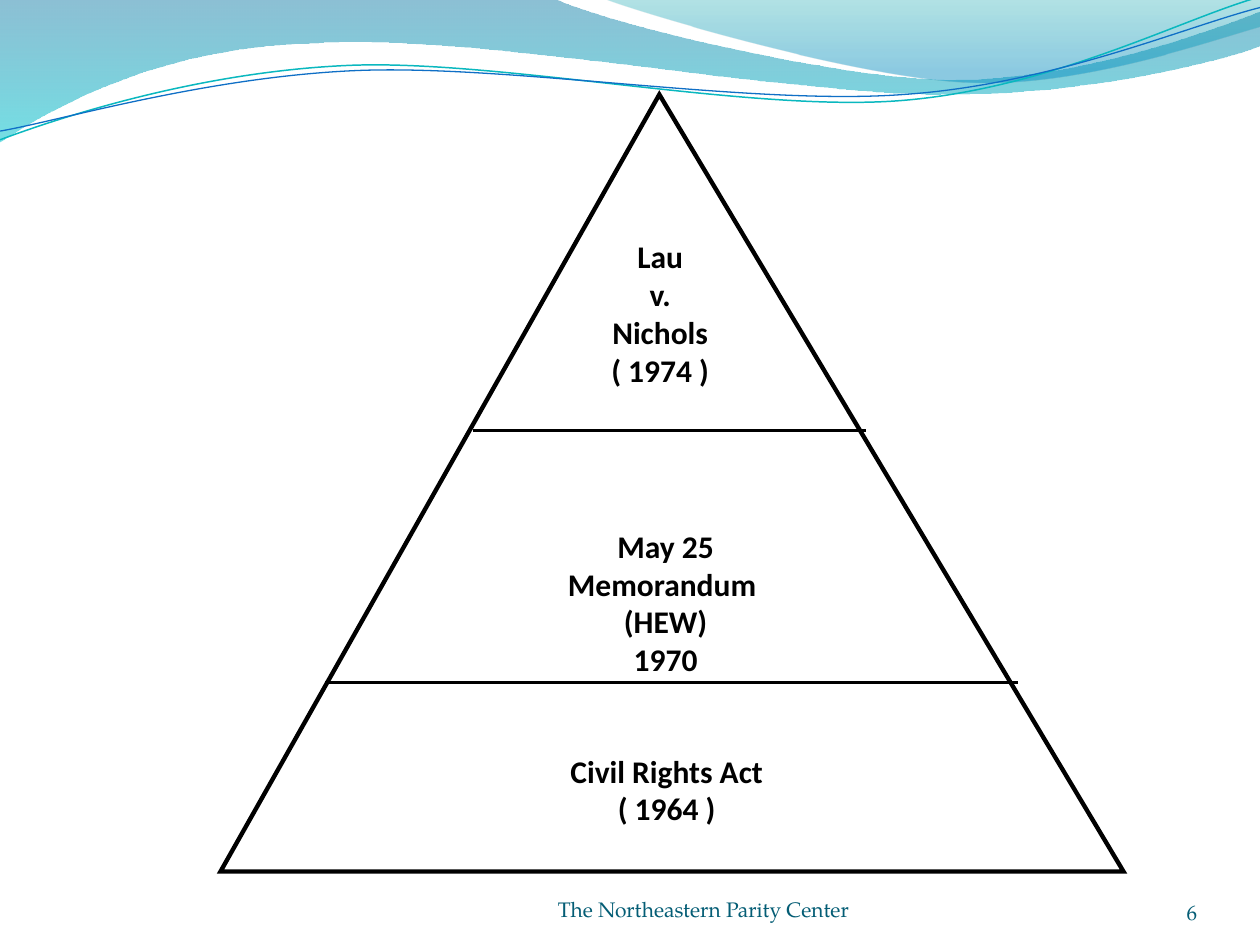
from lxml import etree
from pptx import Presentation
from pptx import util as u
from pptx.dml import color
from pptx.enum import shapes, text
from pptx.oxml import ns

Pt = u.Pt


def tint(fmt, code):
    fmt.rgb = color.RGBColor.from_string(code)


def write(frame, lines, frame_fmt, font_fmt, code, align):
    for key, val in frame_fmt.items():
        setattr(frame, key, val)
    for i, line in enumerate(lines):
        para = frame.paragraphs[0] if i == 0 else frame.add_paragraph()
        para.alignment = align
        run = para.add_run()
        run.text = line
        for key, val in font_fmt.items():
            setattr(run.font, key, val)
        tint(run.font.color, code)


prs = Presentation()
prs.slide_width, prs.slide_height = Pt(720), Pt(540)
slide = prs.slides.add_slide(prs.slide_layouts[6])
items = slide.shapes

waves = [
    {"start": (0, 0), "parts": [
        (316.8, -0.7),
        (342.7, 12.2, 478.1, 45.4, 545.8, 45.4),
        (614.2, 45.4, 689.8, 18.7, 720, 6.5),
        (720.7, 25.9),
        (707.8, 31.7, 626.4, 54.7, 537.1, 54),
        (447.8, 54, 275, 20.2, 185, 24.5),
        (92.9, 25.9, 33.1, 59.8, -0.7, 81.4),
        (0, 0)],
     "stops": [(0, "0074A1", 45), (1, "00C6CF", 55)]},
    {"start": (344.9, -0.7), "parts": [
        (366.5, 7.9, 491, 44.6, 553.7, 46.8),
        (616.3, 49.7, 691.9, 23, 720, 15.1),
        (720, 0),
        (344.9, -0.7)],
     "stops": [(0, "00A1A9", 30), (0.8, "008BBF", 45)]},
    {"start": (0, 79.9), "parts": [
        (34.6, 67, 113.8, 41, 199.4, 37.4),
        (284.4, 33.8, 427, 64.1, 513.4, 57.6),
        (599.8, 51.1, 675.4, 10.8, 718.6, -1.4)],
     "line": ("0AB8BF", 0.85)},
    {"start": (0, 74.9), "parts": [
        (33.8, 69.1, 118.1, 43.9, 203.8, 40.3),
        (290.2, 36.7, 429.8, 60.5, 516.2, 54),
        (601.9, 48.2, 677.5, 15.1, 720, 4.3)],
     "line": ("0F6FC6", 0.75)},
]
for wave in waves:
    pen = items.build_freeform(*map(Pt, wave["start"]))
    dots = [(Pt(part[i]), Pt(part[i + 1]))
            for part in wave["parts"] for i in range(0, len(part), 2)]
    pen.add_line_segments(dots, close="stops" in wave)
    curve = pen.convert_to_shape()
    curve.shadow.inherit = False
    legs = iter(list(curve.element.iter(ns.qn("a:lnTo"))))
    for part in wave["parts"]:
        leg = next(legs)
        if len(part) == 6:
            bend = etree.Element(ns.qn("a:cubicBezTo"))
            leg.addprevious(bend)
            for knot in (leg, next(legs), next(legs)):
                bend.append(knot[0])
                knot.getparent().remove(knot)
    if "stops" in wave:
        curve.line.fill.background()
        curve.fill.gradient()
        curve.fill.gradient_angle = 270
        for stop, (spot, code, alpha) in zip(curve.fill.gradient_stops, wave["stops"]):
            stop.position = spot
            tint(stop.color, code)
        for tag, (spot, code, alpha) in zip(curve.element.iter(ns.qn("a:srgbClr")), wave["stops"]):
            etree.SubElement(tag, ns.qn("a:alpha")).set("val", str(alpha * 1000))
    else:
        curve.fill.background()
        code, width = wave["line"]
        tint(curve.line.color, code)
        curve.line.width = Pt(width)

mid, right = text.PP_ALIGN.CENTER, text.PP_ALIGN.RIGHT
top, low = text.MSO_ANCHOR.TOP, text.MSO_ANCHOR.BOTTOM
bold = {"name": "Calibri", "size": Pt(18), "bold": True}
small = {"name": "TeX Gyre Pagella", "size": Pt(12)}
flush = {"margin_left": 0, "margin_right": 0, "margin_top": 0, "margin_bottom": 0,
         "word_wrap": True, "vertical_anchor": low}
grow = {"word_wrap": True, "auto_size": text.MSO_AUTO_SIZE.SHAPE_TO_FIT_TEXT}

peak = items.add_shape(shapes.MSO_SHAPE.ISOSCELES_TRIANGLE, Pt(126), Pt(54), Pt(516), Pt(444))
peak.adjustments[0] = 0.486
peak.shadow.inherit = False
peak.fill.solid()
tint(peak.fill.fore_color, "FFFFFF")
tint(peak.line.color, "000000")
peak.line.width = Pt(2.5)
etree.SubElement(peak.element.spPr.find(ns.qn("a:ln")), ns.qn("a:miter")).set("lim", "800000")
write(peak.text_frame, ["May 25", "Memorandum ", "(HEW)", "1970"],
      {"vertical_anchor": top, "margin_top": Pt(25), "word_wrap": True}, bold, "000000", mid)

for x, end, y in ((270, 495, 246), (186, 582, 390)):
    rule = items.add_connector(shapes.MSO_CONNECTOR.STRAIGHT, Pt(x), Pt(y), Pt(end), Pt(y))
    tint(rule.line.color, "000000")
    rule.line.width = Pt(1.5)
    etree.SubElement(rule.element.spPr, ns.qn("a:effectLst"))

boxes = [
    ((342, 132, 70.5, 94.5), ["Lau", "v.", "Nichols", "( 1974 )"],
     {**grow, "word_wrap": False}, bold, "000000", mid),
    ((270, 426, 222, 51), ["Civil Rights Act", "( 1964 )"], grow, bold, "000000", mid),
    ((270, 498, 264, 28.5), ["The Northeastern Parity Center"], flush, small, "045D75", mid),
    ((624, 500, 60, 28.5), ["6"], flush, small, "045D75", right),
]
for place, *rest in boxes:
    box = items.add_textbox(*map(Pt, place))
    write(box.text_frame, *rest)

prs.save("out.pptx")
